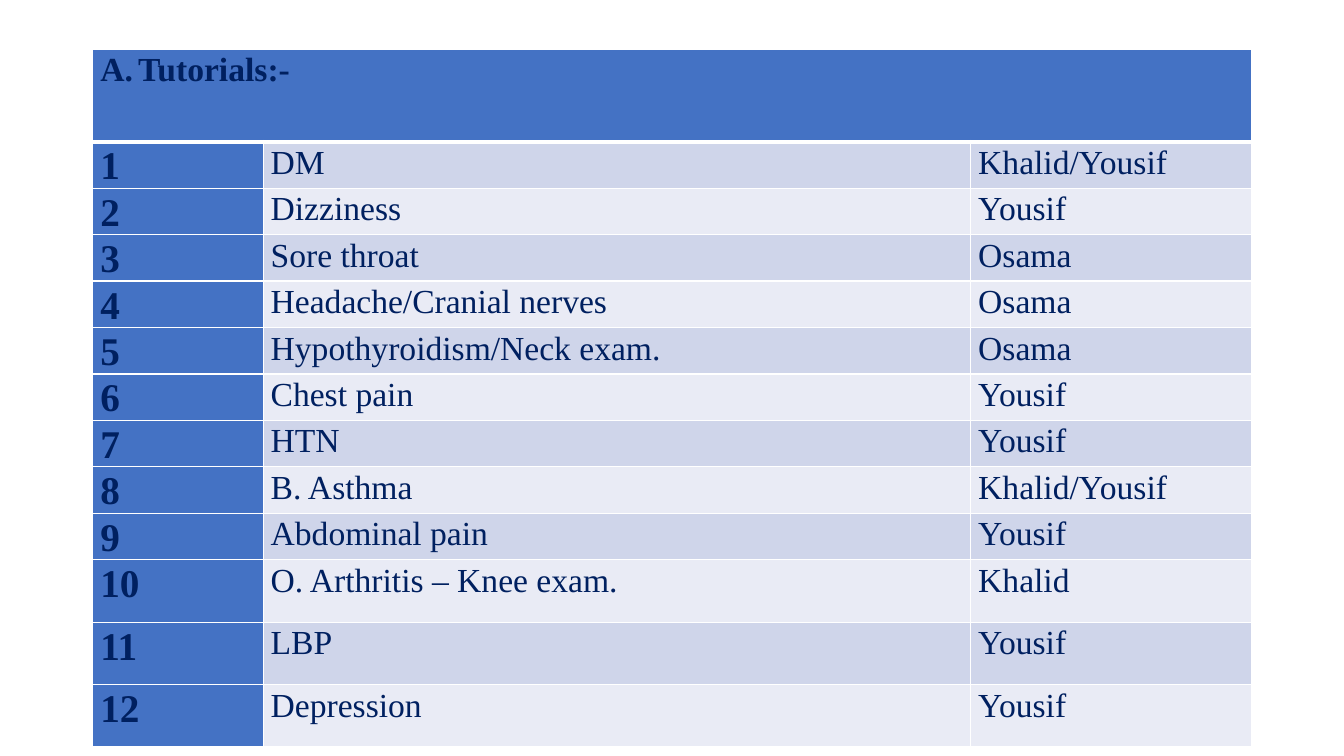
from lxml import etree
from pptx import Presentation
from pptx.dml.color import RGBColor
from pptx.oxml import ns
from pptx.util import Pt

NAVY = RGBColor(0x00, 0x20, 0x60)
BLUE = RGBColor(0x44, 0x72, 0xC4)
DARK = RGBColor(0xCF, 0xD5, 0xEA)
PALE = RGBColor(0xE9, 0xEB, 0xF5)
WHITE = RGBColor(0xFF, 0xFF, 0xFF)
FONT = "Times New Roman"
COLS = [121.7, 505.4, 200.9]
ROWS = [66] + [32.4] * 9 + [44.64] * 3
TOPICS = [
    ("DM", "Khalid/Yousif"),
    ("Dizziness", "Yousif"),
    ("Sore throat", "Osama"),
    ("Headache/Cranial nerves", "Osama"),
    ("Hypothyroidism/Neck exam.", "Osama"),
    ("Chest pain", "Yousif"),
    ("HTN", "Yousif"),
    ("B. Asthma", "Khalid/Yousif"),
    ("Abdominal pain", "Yousif"),
    ("O. Arthritis – Knee exam.", "Khalid"),
    ("LBP", "Yousif"),
    ("Depression", "Yousif"),
]


def write(cell, words, size=24, bold=False):
    """Put one formatted paragraph in a cell."""
    para = cell.text_frame.paragraphs[0]
    para.line_spacing = 1.07
    para.space_after = Pt(8)
    run = para.add_run()
    run.text = words
    font = run.font
    font.name, font.size, font.bold = FONT, Pt(size), bold
    font.color.rgb = NAVY
    return para


def number(para):
    """Number a paragraph with a hanging capital letter."""
    props = para._p.get_or_add_pPr()
    props.set("marL", str(Pt(27)))
    props.set("indent", str(-Pt(27)))
    mark = etree.SubElement(props, ns.qn("a:buFont"))
    mark.set("typeface", "+mj-lt")
    mark = etree.SubElement(props, ns.qn("a:buAutoNum"))
    mark.set("type", "alphaUcPeriod")


def border(cell, base=1):
    """Draw white lines around a cell."""
    props = cell._tc.get_or_add_tcPr()
    for spot, side in enumerate("LRTB"):
        line = etree.Element(ns.qn("a:ln" + side))
        line.set("w", str(Pt(base if side == "B" else 1)))
        fill = etree.SubElement(line, ns.qn("a:solidFill"))
        etree.SubElement(fill, ns.qn("a:srgbClr")).set("val", str(WHITE))
        props.insert(spot, line)


def paint(cell, color, base=1):
    """Set the margins, fill and borders of a cell."""
    cell.margin_left = cell.margin_right = Pt(5.4)
    cell.margin_top = cell.margin_bottom = 0
    cell.fill.solid()
    cell.fill.fore_color.rgb = color
    border(cell, base)


def grid(slide):
    """Add the empty table with its row and column sizes."""
    table = slide.shapes.add_table(
        len(ROWS), len(COLS), Pt(66.24), Pt(35.28), Pt(sum(COLS)), Pt(sum(ROWS))
    ).table
    for col, width in zip(table.columns, COLS):
        col.width = Pt(width)
    for row, height in zip(table.rows, ROWS):
        row.height = Pt(height)
    return table


def main():
    """Build the slide of tutorials."""
    deck = Presentation()
    deck.slide_width, deck.slide_height = Pt(960), Pt(540)
    table = grid(deck.slides.add_slide(deck.slide_layouts[6]))
    for cell in table.rows[0].cells:
        paint(cell, BLUE, base=3)
    head = table.cell(0, 0)
    head.merge(table.cell(0, 2))
    number(write(head, "Tutorials:-", bold=True))
    for row, (topic, tutor) in enumerate(TOPICS, 1):
        band = DARK if row % 2 else PALE
        count, title, name = table.rows[row].cells
        for cell, color in ((count, BLUE), (title, band), (name, band)):
            paint(cell, color)
        write(count, str(row), size=28, bold=True)
        write(title, topic)
        write(name, tutor)
    deck.save("out.pptx")


if __name__ == "__main__":
    main()
